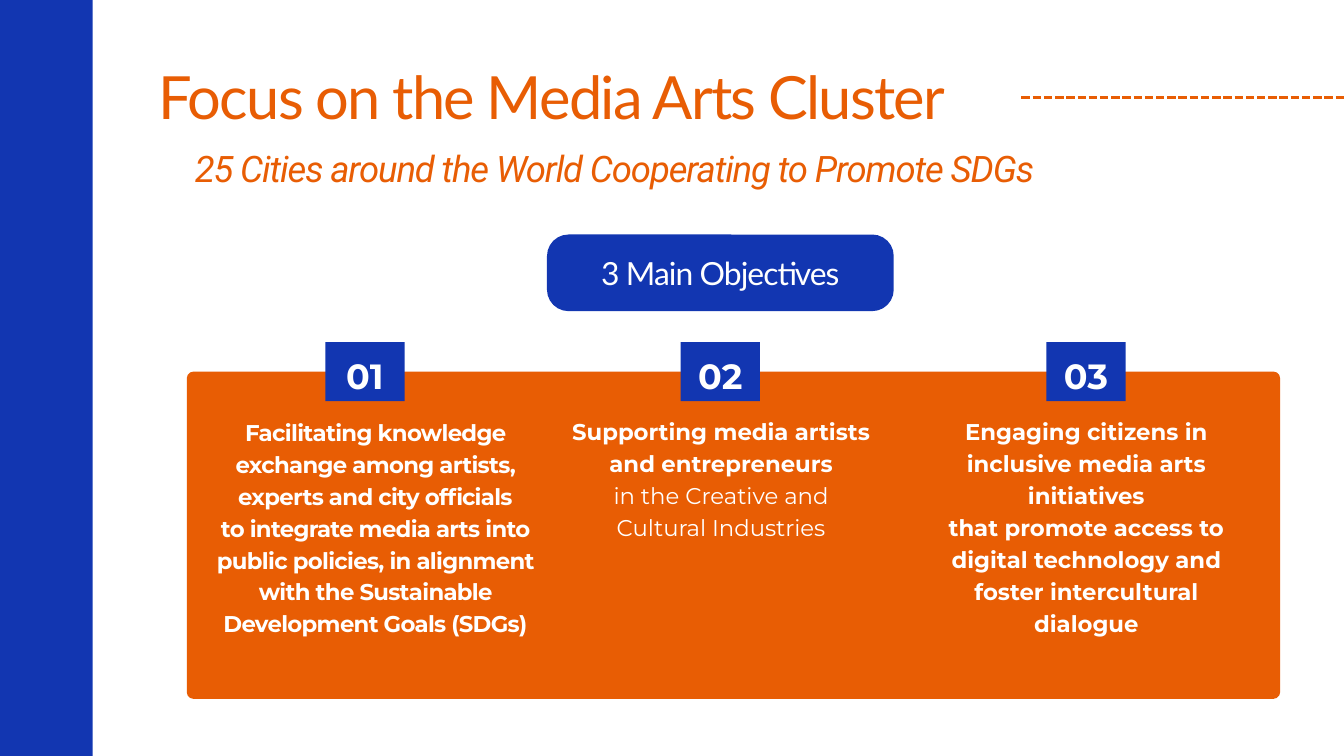
from pptx import Presentation
from pptx.dml.color import RGBColor
from pptx.enum import dml, shapes, text
from pptx.oxml import ns
from pptx.util import Inches, Pt
from lxml import etree

BLUE, ORANGE, WHITE = "1236B1", "E85D04", "FFFFFF"


def color(value):
    return RGBColor.from_string(value)


def write(para, words, font="Montserrat", size=24.4, fill=WHITE, bold=False,
          italic=False, tracking=0, leading=34.2, align=text.PP_ALIGN.CENTER):
    para.alignment = align
    para.line_spacing = Pt(leading)
    para.space_before = Pt(0)
    span = para.add_run()
    span.text = words
    span.font.name = font
    span.font.size = Pt(size)
    span.font.bold = bold
    span.font.italic = italic
    span.font.color.rgb = color(fill)
    if tracking:
        span.font._element.set("spc", str(round(tracking * 100)))


class Slide:
    def __init__(self, deck):
        self.page = deck.slides.add_slide(deck.slide_layouts[0])

    def frame(self, box, inset=0, anchor=text.MSO_ANCHOR.TOP):
        frame = box.text_frame
        frame.word_wrap = True
        frame.auto_size = text.MSO_AUTO_SIZE.NONE
        frame.vertical_anchor = anchor
        frame.margin_left = frame.margin_right = Inches(inset)
        frame.margin_top = frame.margin_bottom = Inches(inset)
        return frame

    def heading(self, index, place, words, **style):
        box = self.page.placeholders[index]
        box.left, box.top, box.width, box.height = map(Inches, place)
        write(self.frame(box).paragraphs[0], words, **style)

    def block(self, place, fill, radius=0):
        kind = shapes.MSO_SHAPE.ROUNDED_RECTANGLE if radius else shapes.MSO_SHAPE.RECTANGLE
        block = self.page.shapes.add_shape(kind, *map(Inches, place))
        block.shadow.inherit = False
        block.fill.solid()
        block.fill.fore_color.rgb = color(fill)
        block.line.fill.background()
        if radius:
            block.adjustments[0] = radius / min(place[2:])
        return block

    def label(self, place, lines, **style):
        frame = self.frame(self.page.shapes.add_textbox(*map(Inches, place)))
        for number, (words, bold) in enumerate(lines):
            para = frame.add_paragraph() if number else frame.paragraphs[0]
            write(para, words, bold=bold, **style)

    def button(self, place, words, **style):
        button = self.block(place, BLUE, radius=0.32)
        frame = self.frame(button, 0.06, text.MSO_ANCHOR.MIDDLE)
        write(frame.paragraphs[0], words, **style)

    def dashes(self, left, right, top):
        line = self.page.shapes.add_connector(
            shapes.MSO_CONNECTOR.STRAIGHT, *map(Inches, (left, top, right, top)))
        line.line.color.rgb = color(ORANGE)
        line.line.width = Pt(3)
        line.line.dash_style = dml.MSO_LINE.SQUARE_DOT
        etree.SubElement(line._element.spPr, ns.qn("a:effectLst"))


OBJECTIVES = [
    (4.84, (3.17, 6.16, 4.83, 3.28), -0.7, [
        ("Facilitating knowledge exchange among artists, experts and city officials", True),
        ("to integrate media arts into public policies, in alignment with the "
         "Sustainable Development Goals (SDGs)", True)]),
    (10.13, (8.46, 6.15, 4.54, 1.86), 0, [
        ("Supporting media artists and entrepreneurs", True),
        ("in the Creative and Cultural Industries", False)]),
    (15.57, (13.75, 6.15, 4.83, 3.28), 0, [
        ("Engaging citizens in inclusive media arts initiatives", True),
        ("that promote access to digital technology and foster intercultural dialogue", True)]),
]


def main():
    deck = Presentation()
    deck.slide_width, deck.slide_height = Inches(20), Inches(11.25)
    slide = Slide(deck)
    slide.block((0, 0, 1.38, 11.25), BLUE)
    slide.heading(0, (2.36, 0.9, 14.73, 1.05), "Focus on the Media Arts Cluster",
                  font="Lato", size=63.8, fill=ORANGE, tracking=-1.9, leading=76.5,
                  align=text.PP_ALIGN.LEFT)
    slide.heading(1, (1.2, 2.17, 15.89, 0.64),
                  "25 Cities around the World Cooperating to Promote SDGs",
                  font="Roboto", size=39.1, fill=ORANGE, italic=True,
                  tracking=-1.2, leading=46.9)
    slide.dashes(15.2, 20.75, 1.45)
    slide.button((8.14, 3.49, 5.16, 1.14), "3 Main Objectives",
                 font="Lato", size=34.1, tracking=-1, leading=40.9)
    slide.block((2.78, 5.53, 16.27, 4.87), ORANGE, radius=0.1)
    for number, (left, place, tracking, lines) in enumerate(OBJECTIVES, 1):
        slide.block((left, 5.09, 1.18, 0.88), BLUE)
        slide.label((left, 5.17, 1.18, 0.67), [(f"{number:02}", True)], size=37.5, leading=52.5)
        slide.label(place, lines, tracking=tracking)
    deck.save("out.pptx")


if __name__ == "__main__":
    main()
